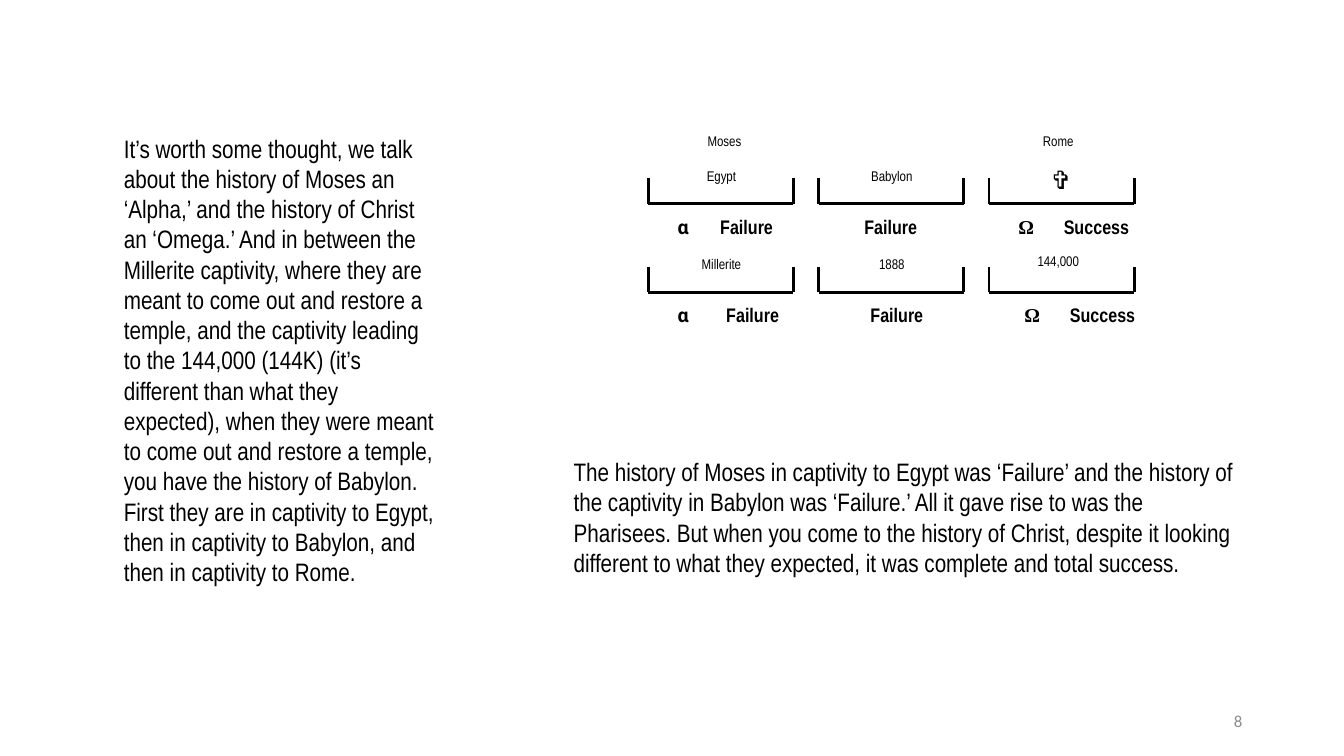
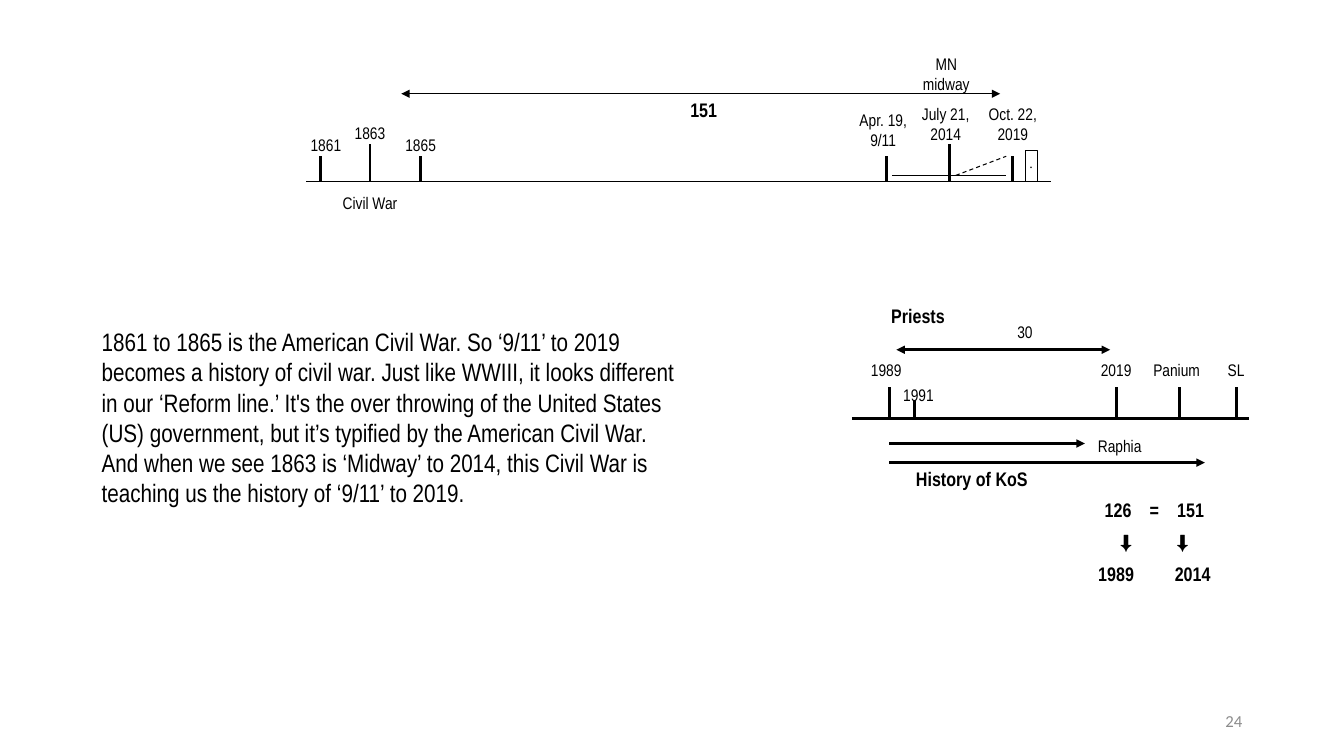
import lxml.etree
import pptx
import pptx.dml.color
import pptx.enum.dml
import pptx.enum.shapes
import pptx.enum.text
import pptx.oxml.ns
import pptx.util

PX = 9144
BLACK = "000000"
GREY = "8C8C8C"
NARROW = "Arial Narrow"
LEFT = pptx.enum.text.PP_ALIGN.LEFT
CENTER = pptx.enum.text.PP_ALIGN.CENTER
RIGHT = pptx.enum.text.PP_ALIGN.RIGHT
TOP = pptx.enum.text.MSO_ANCHOR.TOP
MIDDLE = pptx.enum.text.MSO_ANCHOR.MIDDLE
FIT_SHAPE = pptx.enum.text.MSO_AUTO_SIZE.SHAPE_TO_FIT_TEXT


def add_text(slide, text, box, size=12, bold=False, align=CENTER, font=NARROW,
             colour=BLACK, insets=(4, 4), anchor=TOP, outline=None):
    left, top, width, height = [value * PX for value in box]
    if outline:
        shape = slide.shapes.add_shape(
            pptx.enum.shapes.MSO_SHAPE.RECTANGLE, left, top, width, height)
        shape.shadow.inherit = False
        shape.fill.background()
        shape.line.width = pptx.util.Pt(outline)
        shape.line.color.rgb = pptx.dml.color.RGBColor.from_string(colour)
    else:
        shape = slide.shapes.add_textbox(left, top, width, height)
    frame = shape.text_frame
    frame.word_wrap = True
    frame.vertical_anchor = anchor
    frame.margin_left = frame.margin_right = insets[0] * PX
    frame.margin_top = frame.margin_bottom = insets[1] * PX
    frame.text = text
    for paragraph in frame.paragraphs:
        paragraph.alignment = align
        for run in paragraph.runs:
            run.font.name = font
            run.font.size = pptx.util.Pt(size)
            run.font.bold = bold
            run.font.color.rgb = pptx.dml.color.RGBColor.from_string(colour)
    return shape


def add_line(slide, start, end, weight=2, arrows=(), dashed=False):
    connector = slide.shapes.add_connector(
        pptx.enum.shapes.MSO_CONNECTOR.STRAIGHT,
        *[value * PX for value in start + end])
    connector.line.width = pptx.util.Pt(weight)
    connector.line.color.rgb = pptx.dml.color.RGBColor.from_string(BLACK)
    if dashed:
        connector.line.dash_style = pptx.enum.dml.MSO_LINE.DASH
    properties = connector._element.spPr
    outline = properties.find(pptx.oxml.ns.qn("a:ln"))
    for arrow in arrows:
        lxml.etree.SubElement(outline, pptx.oxml.ns.qn("a:" + arrow), type="triangle")
    lxml.etree.SubElement(properties, pptx.oxml.ns.qn("a:effectLst"))
    return connector


presentation = pptx.Presentation()
presentation.slide_width = 1333 * PX
presentation.slide_height = 750 * PX

slides = []
pages = [
    ("8", [
        ("It’s worth some thought, we talk about the history of Moses an ‘Alpha,’ and the "
         "history of Christ an ‘Omega.’ And in between the Millerite captivity, where they "
         "are meant to come out and restore a temple, and the captivity leading to the "
         "144,000 (144K) (it’s different than what they expected), when they were meant to "
         "come out and restore a temple, you have the history of Babylon. First they are in "
         "captivity to Egypt, then in captivity to Babylon, and then in captivity to Rome.",
         (113, 127, 330, 460)),
        ("The history of Moses in captivity to Egypt was ‘Failure’ and the history of the "
         "captivity in Babylon was ‘Failure.’ All it gave rise to was the Pharisees. But "
         "when you come to the history of Christ, despite it looking different to what they "
         "expected, it was complete and total success.",
         (559, 448, 675, 131)),
    ]),
    ("24", [
        ("1861 to 1865 is the American Civil War. So ‘9/11’ to 2019 becomes a history of "
         "civil war. Just like WWIII, it looks different in our ‘Reform line.’ It's the over "
         "throwing of the United States (US) government, but it’s typified by the American "
         "Civil War. And when we see 1863 is ‘Midway’ to 2014, this Civil War is teaching us "
         "the history of ‘9/11’ to 2019.",
         (91, 319, 589, 192)),
    ]),
]
for number, bodies in pages:
    slide = presentation.slides.add_slide(presentation.slide_layouts[6])
    slides.append(slide)
    add_text(slide, number, (942, 695, 300, 40), align=RIGHT, font="Calibri",
             colour=GREY, insets=(10, 5), anchor=MIDDLE)
    for text, box in bodies:
        body = add_text(slide, text, box, 18, align=LEFT, insets=(10, 5))
        body.text_frame.auto_size = FIT_SHAPE
captivities, timelines = slides

for row in range(2):
    floor = 202 + 88 * row
    for column in range(3):
        left = 643 + 169 * column
        right = left + 144
        add_line(captivities, (left, floor), (right, floor))
        for side in (left, right):
            add_line(captivities, (side, floor), (side, floor - 25))
    shift = 6 * row
    outcome_top = 209 + 87 * row
    for outcome, left, width in [("Failure", 700, 81), ("Failure", 843, 81),
                                 ("Success", 1050, 75)]:
        add_text(captivities, outcome, (left + shift, outcome_top, width, 25), 14, True)
    add_text(captivities, "α", (668, outcome_top, 33, 25), 14, True, LEFT, "Roboto")
    add_text(captivities, "Ω", (1006 + shift, outcome_top, 33, 25), 14, True, LEFT,
             "Times New Roman")

for label, left, top in [("Moses", 681, 127), ("Rome", 1012, 127),
                         ("Egypt", 678, 162), ("Babylon", 847, 162),
                         ("Millerite", 678, 249), ("1888", 847, 249),
                         ("144,000", 1012, 246)]:
    add_text(captivities, label, (left, top, 75, 31), 10)
add_text(captivities, "✞", (1015, 159, 75, 34), 18, font="Arial")

both_ends = ("headEnd", "tailEnd")
add_line(timelines, (304, 180), (1042, 180), 0.75)
add_line(timelines, (398, 93), (992, 93), 0.75, both_ends)
add_line(timelines, (885, 174), (998, 174), 0.75)
add_line(timelines, (948, 174), (998, 155), 0.75, dashed=True)
for x in (318, 417, 879, 1004):
    add_line(timelines, (x, 180), (x, 155))
add_line(timelines, (942, 180), (942, 143))
midway_year = add_text(timelines, "1863", (342, 118, 50, 25))
midway_tick = add_line(timelines, (367, 180), (367, 143))
midway_tick.end_connect(midway_year, 2)

for year, left in [("1861", 304), ("1865", 398)]:
    add_text(timelines, year, (left, 130, 50, 25), align=LEFT)
for label, box in [("Civil War", (317, 187, 100, 44)),
                   ("Apr. 19,\n9/11", (848, 105, 56, 50)),
                   ("July 21,\n2014", (910, 99, 56, 50)),
                   ("MN\nmidway", (904, 49, 69, 50)),
                   ("Oct. 22,\n2019", (967, 99, 75, 50)),
                   ("30", (982, 315, 69, 25)),
                   ("1989", (857, 353, 44, 25)),
                   ("1991", (889, 378, 44, 25)),
                   ("2019", (1082, 353, 50, 25)),
                   ("Panium", (1139, 353, 56, 25)),
                   ("SL", (1201, 353, 50, 25))]:
    add_text(timelines, label, box)
add_text(timelines, ".", (1017, 149, 12, 31), 10, align=LEFT, font="Times New Roman",
         outline=0.25)

for heading, box in [("151", (623, 93, 150, 31)),
                     ("Priests", (870, 297, 81, 31)),
                     ("History of KoS", (889, 459, 150, 25))]:
    add_text(timelines, heading, box, 14, True)

add_line(timelines, (845, 415), (1239, 415))
for x, top in [(882, 384), (907, 397), (1107, 384), (1170, 384), (1226, 384)]:
    add_line(timelines, (x, top), (x, 415))
add_line(timelines, (889, 347), (1101, 347), arrows=both_ends)
add_line(timelines, (882, 459), (1195, 459), arrows=("tailEnd",))
raphia = add_text(timelines, "Raphia", (1076, 428, 69, 24))
raphia_arrow = add_line(timelines, (882, 440), (1076, 440), arrows=("tailEnd",))
raphia_arrow.end_connect(raphia, 1)

for text, center, top, font in [("126", 1109, 490, NARROW), ("=", 1145, 490, NARROW),
                                ("151", 1181, 490, NARROW),
                                ("⬇", 1117, 522, "Arial"), ("⬇", 1173, 522, "Arial"),
                                ("1989", 1107, 553, NARROW), ("2014", 1183, 553, NARROW)]:
    add_text(timelines, text, (center - 25, top, 50, 31), 14, True, font=font)

presentation.save("out.pptx")
